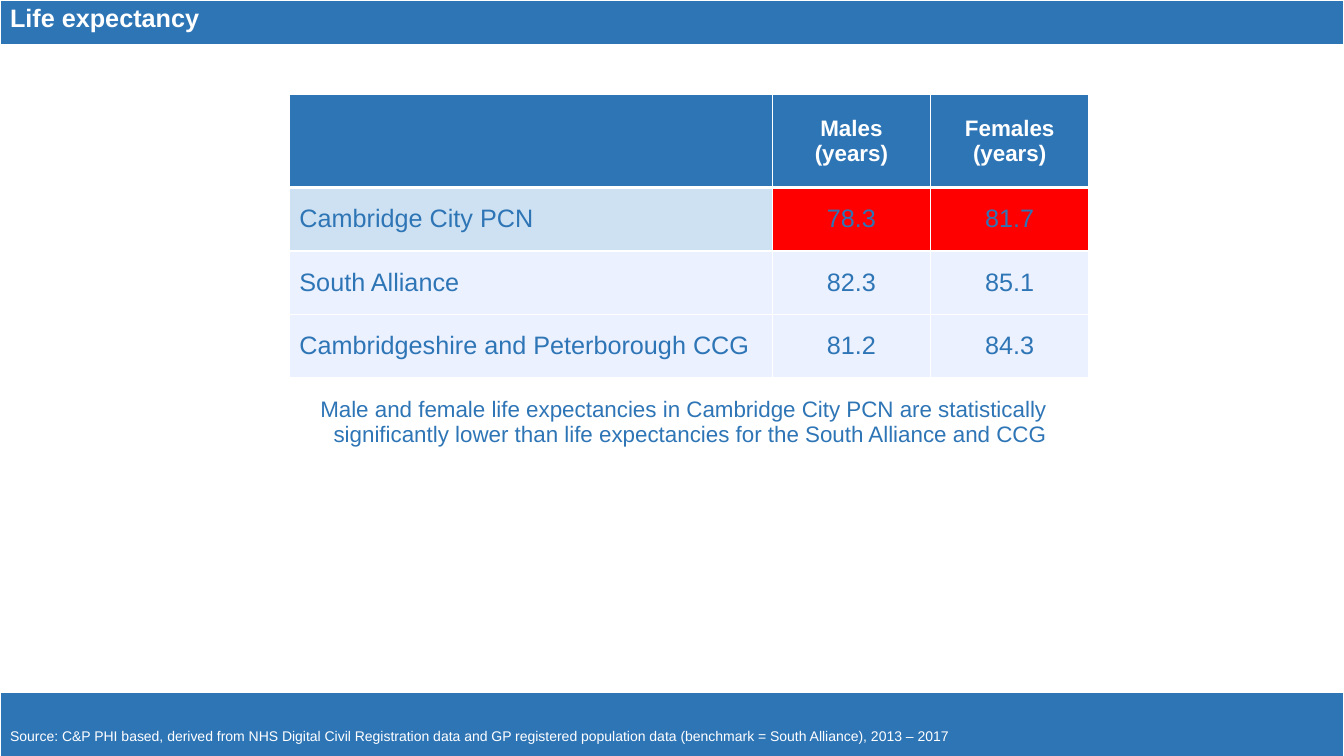
from pptx import Presentation
from pptx.dml.color import RGBColor
from pptx.enum.text import MSO_ANCHOR as Anchor, PP_ALIGN as Align
from pptx.oxml.ns import qn
from pptx.util import Inches, Pt
from lxml.etree import SubElement

BLUE, WHITE, RED = "2E75B6", "FFFFFF", "FF0000"
LIGHT_BLUE, PALE_BLUE = "CEE1F2", "EBF1FF"


def color(value):
    return RGBColor.from_string(value)


class SlideBuilder:
    font = "Arial"
    border_color = WHITE

    def __init__(self, slide):
        self.slide = slide

    def table(self, left, top, widths, heights):
        frame = self.slide.shapes.add_table(
            len(heights), len(widths), Inches(left), Inches(top),
            Inches(sum(widths)), Inches(sum(heights)))
        table = frame.table
        table.first_row = table.horz_banding = False
        for column, width in zip(table.columns, widths):
            column.width = Inches(width)
        for row, height in zip(table.rows, heights):
            row.height = Inches(height)
        return table

    def borders(self, cell, top=1, bottom=1):
        properties = cell._tc.get_or_add_tcPr()
        for side, points in (("L", 1), ("R", 1), ("T", top), ("B", bottom)):
            line = SubElement(properties, qn(f"a:ln{side}"), w=str(Pt(points)))
            fill = SubElement(line, qn("a:solidFill"))
            SubElement(fill, qn("a:srgbClr"), val=self.border_color)

    def cell(self, cell, lines, fill, size=18, text_color=BLUE, bold=False,
             align=Align.LEFT, anchor=Anchor.TOP, margin_top=0.05,
             indents=(0, 0), top=1, bottom=1):
        self.borders(cell, top, bottom)
        cell.fill.solid()
        cell.fill.fore_color.rgb = color(fill)
        cell.vertical_anchor = anchor
        cell.margin_top = Inches(margin_top)
        frame = cell.text_frame
        for index, (text, indent) in enumerate(zip(lines, indents)):
            paragraph = frame.add_paragraph() if index else frame.paragraphs[0]
            paragraph.alignment = align
            if indent:
                paragraph._p.get_or_add_pPr().set("marL", str(Inches(indent)))
            run = paragraph.add_run()
            run.text = text
            run.font.name = self.font
            run.font.size = Pt(size)
            run.font.bold = bold
            run.font.color.rgb = color(text_color)


def main():
    presentation = Presentation()
    presentation.slide_width = Inches(13.33)
    presentation.slide_height = Inches(7.5)
    slide = presentation.slides.add_slide(presentation.slide_layouts[6])
    builder = SlideBuilder(slide)

    # Page frame: title bar, body with the finding, source bar
    page = builder.table(0, 0, [13.33], [0.45, 6.42, 0.64])
    builder.cell(page.cell(0, 0), ["Life expectancy"], BLUE,
                 text_color=WHITE, bold=True, bottom=3)
    finding = [
        "Male and female life expectancies in Cambridge City PCN are statistically",
        "significantly lower than life expectancies for the South Alliance and CCG",
    ]
    builder.cell(page.cell(1, 0), finding, WHITE, size=16, align=Align.CENTER,
                 margin_top=3.49, indents=(0.23, 0.36), top=3)
    source = ("Source: C&P PHI based, derived from NHS Digital Civil Registration "
              "data and GP registered population data "
              "(benchmark = South Alliance), 2013 – 2017")
    builder.cell(page.cell(2, 0), [source], BLUE, size=10, text_color=WHITE,
                 margin_top=0.36)

    # Life expectancy table: header
    expectancy = builder.table(2.87, 0.94, [4.79, 1.57, 1.57],
                               [0.92, 0.63, 0.63, 0.63])
    headings = [[], ["Males", "(years)"], ["Females", "(years)"]]
    for column, lines in enumerate(headings):
        builder.cell(expectancy.cell(0, column), lines, BLUE, size=16,
                     text_color=WHITE, bold=True, align=Align.CENTER,
                     anchor=Anchor.MIDDLE, bottom=3)

    # Life expectancy table: areas, with fills for name and values
    areas = [
        ("Cambridge City PCN", "78.3", "81.7", LIGHT_BLUE, RED),
        ("South Alliance", "82.3", "85.1", PALE_BLUE, PALE_BLUE),
        ("Cambridgeshire and Peterborough CCG", "81.2", "84.3",
         PALE_BLUE, PALE_BLUE),
    ]
    for row, (*texts, name_fill, value_fill) in enumerate(areas, start=1):
        for column, text in enumerate(texts):
            builder.cell(expectancy.cell(row, column), [text],
                         value_fill if column else name_fill,
                         align=Align.CENTER if column else Align.LEFT,
                         anchor=Anchor.MIDDLE, top=3 if row == 1 else 1)

    presentation.save("out.pptx")


if __name__ == "__main__":
    main()
